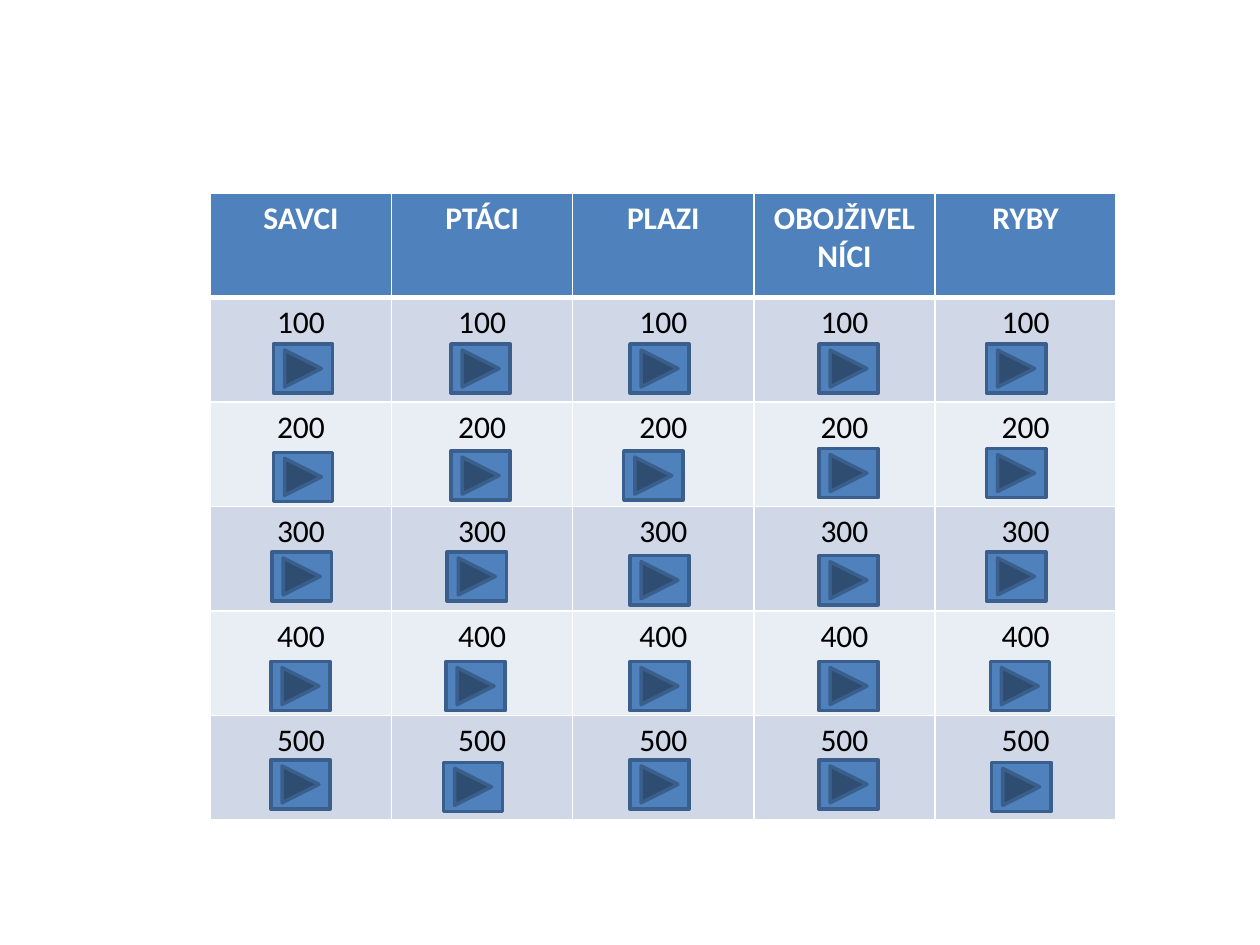
import pptx
import pptx.util
from lxml import etree
from pptx.dml.color import RGBColor
from pptx.enum.shapes import MSO_SHAPE
from pptx.enum.text import PP_ALIGN
from pptx.oxml.ns import qn
from pptx.util import Inches, Pt

CATEGORIES = ["SAVCI", "PTÁCI", "PLAZI", "OBOJŽIVELNÍCI", "RYBY"]
POINTS = ["100", "200", "300", "400", "500"]

# Left and top of each button in inches, one list per category, from 100 to 500 points
BUTTONS = {
    "SAVCI": [(2.17, 2.73), (2.17, 3.59), (2.16, 4.38), (2.15, 5.25), (2.15, 6.03)],
    "PTÁCI": [(3.58, 2.73), (3.58, 3.58), (3.55, 4.38), (3.54, 5.25), (3.52, 6.05)],
    "PLAZI": [(5, 2.73), (4.95, 3.58), (5, 4.41), (5, 5.25), (5, 6.03)],
    "OBOJŽIVELNÍCI": [(6.5, 2.73), (6.5, 3.56), (6.5, 4.41), (6.5, 5.25), (6.5, 6.03)],
    "RYBY": [(7.83, 2.73), (7.83, 3.56), (7.83, 4.38), (7.86, 5.25), (7.87, 6.05)],
}
BUTTON_WIDTH, BUTTON_HEIGHT = Inches(0.47), Inches(0.39)

FONT = "Calibri"
BLUE = RGBColor(0x4F, 0x81, 0xBD)
DARK_BLUE = RGBColor(0x3A, 0x5F, 0x8C)
BAND_DARK = RGBColor(0xD0, 0xD8, 0xE8)
BAND_LIGHT = RGBColor(0xE9, 0xED, 0xF4)
WHITE = RGBColor(0xFF, 0xFF, 0xFF)
BLACK = RGBColor(0x00, 0x00, 0x00)


def add_borders(cell, top, bottom):
    """Draw white cell borders; top and bottom are widths in points."""
    properties = cell._tc.get_or_add_tcPr()
    for side, width in (("L", 1), ("R", 1), ("T", top), ("B", bottom)):
        line = etree.SubElement(properties, qn(f"a:ln{side}"), w=str(Pt(width)))
        fill = etree.SubElement(line, qn("a:solidFill"))
        etree.SubElement(fill, qn("a:srgbClr"), val=str(WHITE))


def format_cell(cell, text, row):
    is_header = row == 0
    add_borders(cell, top=3 if row == 1 else 1, bottom=3 if is_header else 1)
    cell.fill.solid()
    cell.fill.fore_color.rgb = BLUE if is_header else BAND_DARK if row % 2 else BAND_LIGHT
    paragraph = cell.text_frame.paragraphs[0]
    paragraph.alignment = PP_ALIGN.CENTER
    run = paragraph.add_run()
    run.text = text
    run.font.name = FONT
    run.font.size = Pt(18)
    run.font.bold = is_header
    run.font.color.rgb = WHITE if is_header else BLACK


def add_board(slide):
    rows = [CATEGORIES] + [[points] * len(CATEGORIES) for points in POINTS]
    table = slide.shapes.add_table(
        len(rows), len(CATEGORIES), Inches(1.67), Inches(1.53), Inches(7.19), Inches(4.98)
    ).table
    for row, texts in enumerate(rows):
        for column, text in enumerate(texts):
            format_cell(table.cell(row, column), text, row)


def add_button(slide, left, top):
    button = slide.shapes.add_shape(
        MSO_SHAPE.ACTION_BUTTON_FORWARD_OR_NEXT,
        Inches(left), Inches(top), BUTTON_WIDTH, BUTTON_HEIGHT,
    )
    button.shadow.inherit = False
    button.fill.solid()
    button.fill.fore_color.rgb = BLUE
    button.line.color.rgb = DARK_BLUE
    button.line.width = Pt(2)


def main():
    presentation = pptx.Presentation()
    presentation.slide_width, presentation.slide_height = Inches(10), Inches(7.5)
    slide = presentation.slides.add_slide(presentation.slide_layouts[6])
    add_board(slide)
    for category in CATEGORIES:
        for left, top in BUTTONS[category]:
            add_button(slide, left, top)
    presentation.save("out.pptx")


if __name__ == "__main__":
    main()
